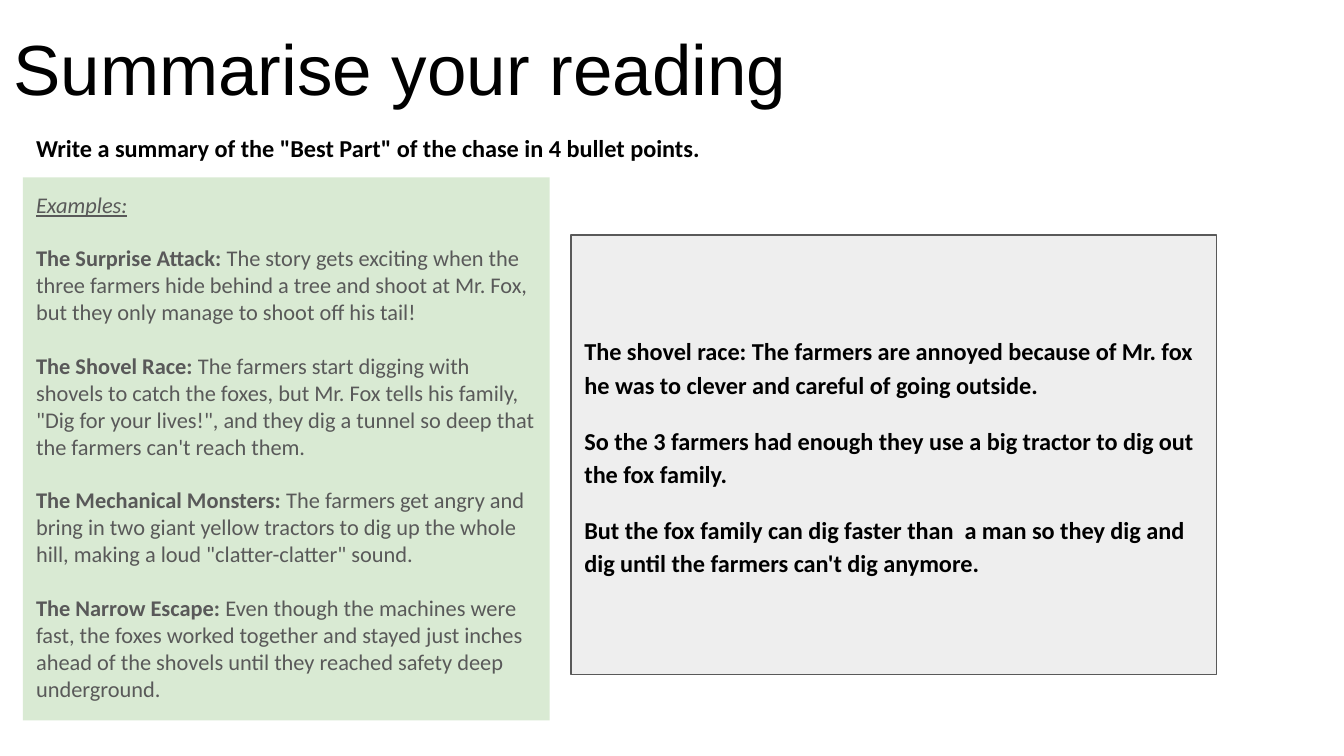
from pptx import Presentation
from pptx import util as u
from pptx.dml.color import RGBColor
from pptx.enum import shapes, text

BLACK, GREY = "000000", "595959"

INSTRUCTION = 'Write a summary of the "Best Part" of the chase in 4 bullet points.'
EXAMPLES = [
    ("The Surprise Attack:", " The story gets exciting when the three farmers hide behind "
     "a tree and shoot at Mr. Fox, but they only manage to shoot off his tail!"),
    ("The Shovel Race:", " The farmers start digging with shovels to catch the foxes, but "
     "Mr. Fox tells his family, \"Dig for your lives!\", and they dig a tunnel so deep "
     "that the farmers can't reach them."),
    ("The Mechanical Monsters: ", "The farmers get angry and bring in two giant yellow "
     "tractors to dig up the whole hill, making a loud \"clatter-clatter\" sound."),
    ("The Narrow Escape:", " Even though the machines were fast, the foxes worked together "
     "and stayed just inches ahead of the shovels until they reached safety deep underground."),
]
SUMMARY = [
    "The shovel race: The farmers are annoyed because of Mr. fox he was to clever and "
    "careful of going outside.",
    "So the 3 farmers had enough they use a big tractor to dig out the fox family.",
    "But the fox family can dig faster than  a man so they dig and dig until the farmers "
    "can't dig anymore.",
]


def color(value):
    return RGBColor.from_string(value)


def set_frame(box, anchor):
    frame = box.text_frame
    frame.word_wrap = True
    frame.auto_size = text.MSO_AUTO_SIZE.NONE
    frame.vertical_anchor = anchor
    frame.margin_left = frame.margin_right = u.Inches(0.1)
    frame.margin_top = frame.margin_bottom = u.Inches(0.1)
    return frame


def style_font(font, size, value, name="Calibri", bold=False):
    font.name = name
    font.size = u.Pt(size)
    font.bold = bold
    font.color.rgb = color(value)


def add_panel(page, left, top, width, height, fill, line=None):
    panel = page.shapes.add_shape(
        shapes.MSO_SHAPE.RECTANGLE,
        u.Inches(left), u.Inches(top), u.Inches(width), u.Inches(height))
    panel.shadow.inherit = False
    panel.fill.solid()
    panel.fill.fore_color.rgb = color(fill)
    if line:
        panel.line.color.rgb = color(line)
        panel.line.width = u.Pt(0.75)
    else:
        panel.line.fill.background()
    return panel


def fill_paragraphs(frame, lines):
    """Write bold, widely spaced paragraphs into the frame."""
    frame.text = "\n".join(lines)
    for para in frame.paragraphs:
        para.alignment = text.PP_ALIGN.LEFT
        para.line_spacing = 1.15
        para.space_before = u.Pt(12)
        style_font(para.runs[0].font, 13, BLACK, bold=True)


def add_title(page, wording):
    title = page.shapes.title
    title.left, title.top = u.Inches(0), u.Inches(0.04)
    title.width, title.height = u.Inches(8.57), u.Inches(0.88)
    frame = set_frame(title, text.MSO_ANCHOR.BOTTOM)
    frame.text = wording
    para = frame.paragraphs[0]
    para.alignment = text.PP_ALIGN.LEFT
    style_font(para.runs[0].font, 38, BLACK, name="Arial")


def add_instruction(page):
    box = page.shapes.add_textbox(
        u.Inches(0.17), u.Inches(0.86), u.Inches(9.6), u.Inches(0.63))
    fill_paragraphs(set_frame(box, text.MSO_ANCHOR.TOP), [INSTRUCTION])


def add_summary(page):
    panel = add_panel(page, 4.25, 1.75, 4.8, 3.27, "EEEEEE", GREY)
    frame = set_frame(panel, text.MSO_ANCHOR.MIDDLE)
    fill_paragraphs(frame, SUMMARY)
    frame.paragraphs[-1].space_after = u.Pt(12)


def add_examples(page):
    panel = add_panel(page, 0.17, 1.32, 3.92, 4.04, "D9EAD3")
    frame = set_frame(panel, text.MSO_ANCHOR.TOP)
    frame.text = "Examples:"
    heading = frame.paragraphs[0]
    heading.alignment = text.PP_ALIGN.LEFT
    font = heading.runs[0].font
    style_font(font, 12, GREY)
    font.italic = font.underline = True
    for name, story in EXAMPLES:
        para = frame.add_paragraph()
        para.alignment = text.PP_ALIGN.LEFT
        para.space_before = u.Pt(14.4)
        for wording, bold in ((name, True), (story, False)):
            span = para.add_run()
            span.text = wording
            style_font(span.font, 12, GREY, bold=bold)


def main():
    deck = Presentation()
    deck.slide_width = u.Inches(10)
    deck.slide_height = deck.slide_width * 9 // 16
    page = deck.slides.add_slide(deck.slide_layouts.get_by_name("Title Only"))
    add_title(page, "Summarise your reading")
    add_instruction(page)
    add_summary(page)
    add_examples(page)
    deck.save("out.pptx")


if __name__ == "__main__":
    main()
